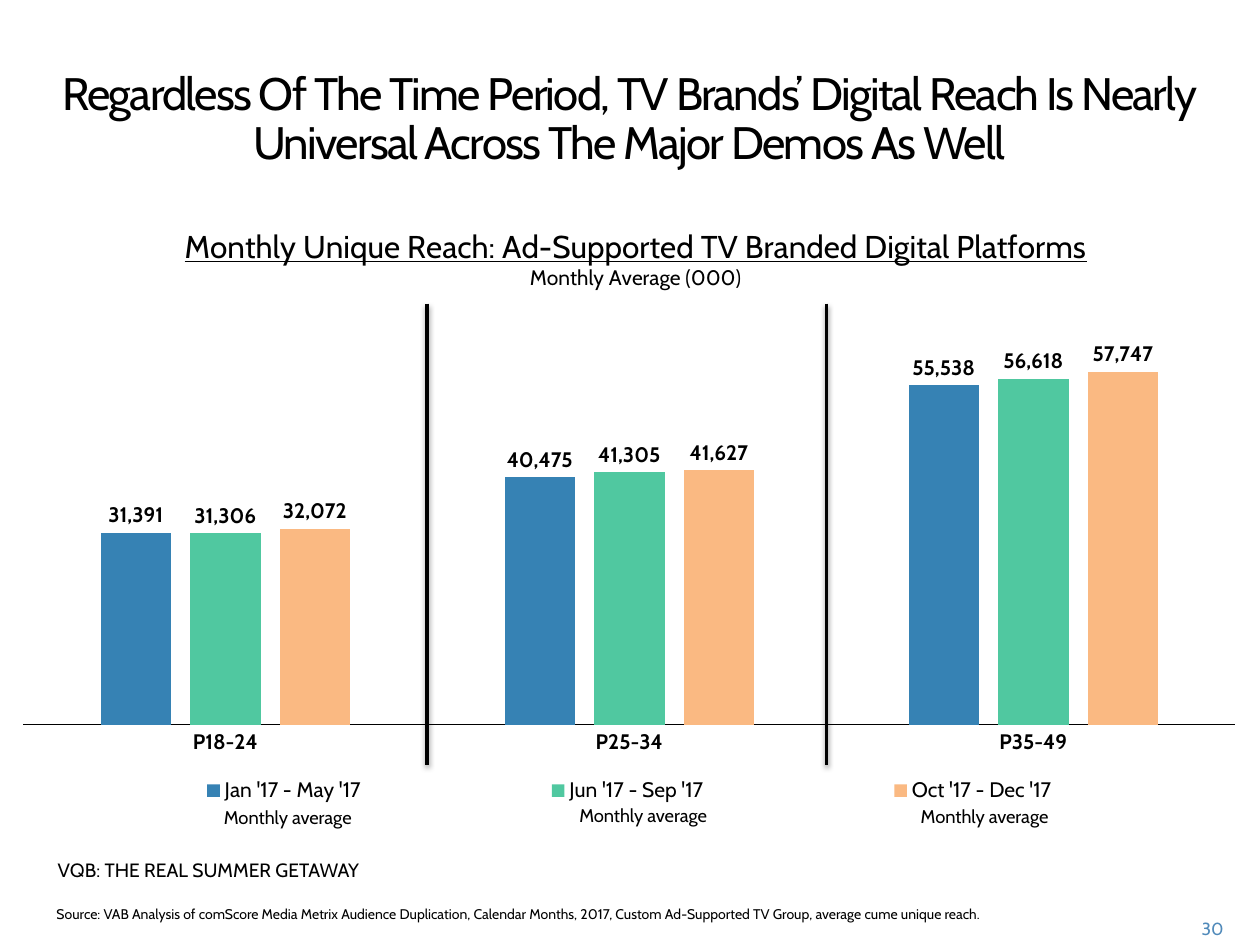
from lxml.etree import SubElement
from pptx import Presentation
from pptx.chart.data import CategoryChartData
from pptx.dml.color import RGBColor
from pptx.enum.chart import XL_CHART_TYPE as ChartType, XL_LABEL_POSITION as LabelPosition
from pptx.enum.chart import XL_LEGEND_POSITION as LegendPosition, XL_TICK_MARK as TickMark
from pptx.enum.shapes import MSO_CONNECTOR as Connector
from pptx.enum.text import MSO_ANCHOR as Anchor, PP_ALIGN as Align
from pptx.oxml import parse_xml
from pptx.oxml.ns import nsdecls, qn
from pptx.util import Pt

PX = 9144
FONT = "Cabin"
COLORS = {"text": "000000", "page": "508ABA", "background": "FFFFFF",
          "winter": "3682B4", "summer": "50C8A0", "autumn": "FAB982"}
DEMOS = ["P18-24", "P25-34", "P35-49"]
PERIODS = [("Jan '17 - May '17", (31391, 40475, 55538), "winter"),
           ("Jun '17 - Sep '17", (31306, 41305, 56618), "summer"),
           ("Oct '17 - Dec '17", (32072, 41627, 57747), "autumn")]
SHADOW = (f'<a:effectLst {nsdecls("a")}>'
          '<a:outerShdw blurRad="39400" dist="20300" dir="5400000" rotWithShape="0">'
          '<a:srgbClr val="000000"><a:alpha val="38000"/></a:srgbClr>'
          '</a:outerShdw></a:effectLst>')


def rgb(key):
    """Return the named colour."""
    return RGBColor.from_string(COLORS[key])


def style(font, size, bold=False, color="text"):
    """Set the typeface, size, weight and colour of a font."""
    font.name, font.size, font.bold = FONT, Pt(size), bold
    font.color.rgb = rgb(color)


def add_text(slide, box, words, size, align=Align.LEFT, color="text"):
    """Place one wrapped paragraph in a box and return its text frame."""
    frame = slide.shapes.add_textbox(*(n * PX for n in box)).text_frame
    frame.word_wrap = True
    frame.text = words
    paragraph = frame.paragraphs[0]
    paragraph.alignment = align
    style(paragraph.runs[0].font, size, color=color)
    return frame


def add_headline(slide, box):
    """Place the slide headline with tight tracking."""
    frame = add_text(slide, box, "Regardless Of The Time Period, TV Brands’ Digital Reach Is "
                     "Nearly Universal Across The Major Demos As Well", 26, Align.CENTER)
    frame.vertical_anchor = Anchor.MIDDLE
    headline = frame.paragraphs[0]
    headline.line_spacing = Pt(28)
    headline.runs[0].font._element.set("spc", "-100")


def set_layout(element, before, **parts):
    """Give a chart part a manual layout placed ahead of the tags in before."""
    for old in element.findall(qn("c:layout")):
        element.remove(old)
    layout = parse_xml(f'<c:layout {nsdecls("c")}><c:manualLayout/></c:layout>')
    for tag, value in parts.items():
        SubElement(layout[0], qn(f"c:{tag}")).set("val", str(value))
    follower = next((child for child in element if child.tag in map(qn, before)), None)
    if follower is None:
        element.append(layout)
    else:
        follower.addprevious(layout)


def add_chart_title(chart):
    """Write the underlined chart title and its unit line."""
    frame = chart.chart_title.text_frame
    frame.text = "Monthly Unique Reach: Ad-Supported TV Branded Digital Platforms"
    frame.add_paragraph().text = "Monthly Average (000)"
    for paragraph, size in zip(frame.paragraphs, (18, 12)):
        paragraph.alignment = Align.CENTER
        style(paragraph.runs[0].font, size)
    frame.paragraphs[0].runs[0].font.underline = True
    set_layout(chart.chart_title._element, ["c:overlay", "c:spPr", "c:txPr"],
               xMode="edge", yMode="edge", x=0.13, y=0.04)


def add_reach_chart(slide, box):
    """Place the clustered columns of reach by demo and period."""
    data = CategoryChartData(number_format="#,##0")
    data.categories = DEMOS
    for period, reach, _ in PERIODS:
        data.add_series(period, reach)
    chart = slide.shapes.add_chart(ChartType.COLUMN_CLUSTERED,
                                   *(n * PX for n in box), data).chart
    style(chart.font, 10)
    add_chart_title(chart)
    chart.has_legend = True
    chart.legend.position = LegendPosition.BOTTOM
    chart.legend.include_in_layout = False
    style(chart.legend.font, 12)
    set_layout(chart.legend._element, ["c:overlay", "c:spPr", "c:txPr"],
               xMode="edge", yMode="edge", x=0, y=0.91, w=1, h=0.07)

    values, demos = chart.value_axis, chart.category_axis
    values.minimum_scale, values.maximum_scale = 0, 70000
    values.has_major_gridlines = values.visible = False
    demos.major_tick_mark = demos.minor_tick_mark = TickMark.NONE
    style(demos.tick_labels.font, 12, True)
    demos.format.line.color.rgb = rgb("text")
    demos.format.line.width = Pt(0.75)

    columns = chart.plots[0]
    columns.gap_width, columns.overlap, columns.vary_by_categories = 219, -27, False
    set_layout(columns._element.getparent(), ["c:barChart"], layoutTarget="inner",
               xMode="edge", yMode="edge", x=0, y=0.16, w=1, h=0.68)
    for series, (_, _, color) in zip(columns.series, PERIODS):
        series.format.fill.solid()
        series.format.fill.fore_color.rgb = rgb(color)
        labels = series.data_labels
        labels.show_value = True
        labels.number_format, labels.number_format_is_linked = "#,##0", False
        labels.position = LabelPosition.OUTSIDE_END
        style(labels.font, 12, True)


def add_dividers(slide, box):
    """Draw a shadowed vertical rule at each side of the box."""
    left, top, width, height = box
    for x in (left, left + width):
        divider = slide.shapes.add_connector(Connector.STRAIGHT, x * PX, top * PX,
                                             x * PX, (top + height) * PX)
        divider.line.color.rgb = rgb("text")
        divider.line.width = Pt(2)
        divider._element.spPr.append(parse_xml(SHADOW))


def add_legend_notes(slide, box):
    """Write the averaging note below each legend entry."""
    left, top, width, height = box
    for dx, dy in ((0, 2), (282, 0), (553, 1)):
        add_text(slide, (left + dx, top + dy, width, height), "Monthly average", 10.5,
                 Align.CENTER)


def add_footer(slide, box):
    """Write the report name, the source and the page number."""
    left, top, _, _ = box
    add_text(slide, (left + 1, top, 261, 47), "VQB: THE REAL SUMMER GETAWAY", 11)
    add_text(slide, (left, top + 38, 800, 26),
             "Source: VAB Analysis of comScore Media Metrix Audience Duplication, Calendar Months, "
             "2017, Custom Ad-Supported TV Group, average cume unique reach.", 8)
    add_text(slide, (left + 885, top + 48, 61, 25), "30", 10, Align.RIGHT, "page")


def main():
    """Build and save the slide."""
    deck = Presentation()
    deck.slide_width, deck.slide_height = 1000 * PX, 750 * PX
    slide = deck.slides.add_slide(deck.slide_layouts[6])
    slide.background.fill.solid()
    slide.background.fill.fore_color.rgb = rgb("background")
    add_reach_chart(slide, (18, 156, 963, 499))
    add_dividers(slide, (339, 241, 317, 366))
    add_legend_notes(slide, (157, 633, 143, 29))
    add_headline(slide, (18, 50, 963, 89))
    add_footer(slide, (35, 676, 946, 73))
    deck.save("out.pptx")


if __name__ == "__main__":
    main()
